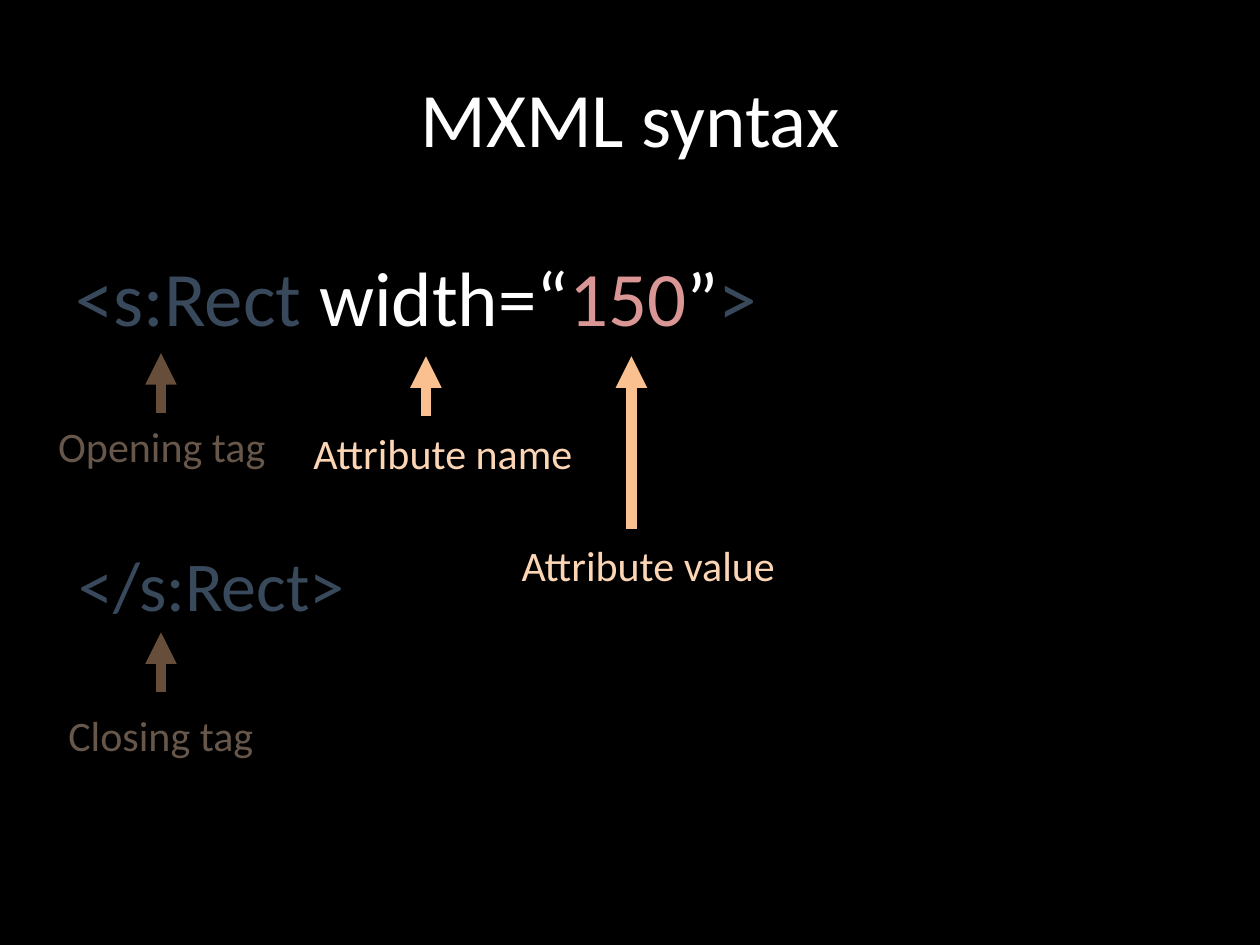
from dataclasses import dataclass

from lxml.etree import SubElement
from pptx import Presentation
from pptx.dml.color import RGBColor
from pptx.enum.shapes import MSO_CONNECTOR, MSO_SHAPE
from pptx.enum.text import MSO_ANCHOR, MSO_AUTO_SIZE, PP_ALIGN
from pptx.oxml.ns import qn
from pptx.util import Pt

BLACK, WHITE = "000000", "FFFFFF"
TAG_BLUE, VALUE_PINK = "8EB4E3", "D99694"
ARROW_ORANGE, LABEL_PEACH = "FAC090", "FCD5B5"


@dataclass(frozen=True)
class Box:
    left: float
    top: float
    width: float
    height: float

    def place(self) -> tuple:
        return Pt(self.left), Pt(self.top), Pt(self.width), Pt(self.height)


@dataclass(frozen=True)
class Arrow:
    x: float
    bottom: float
    top: float


@dataclass(frozen=True)
class Label:
    text: str
    box: Box
    size: float = 24
    color: str = LABEL_PEACH


def rgb(color: str) -> RGBColor:
    return RGBColor.from_string(color)


def add_text(paragraph, text: str, *, size: float, color: str, font: str = "Calibri") -> None:
    run = paragraph.add_run()
    run.text = text
    run.font.name = font
    run.font.size = Pt(size)
    run.font.color.rgb = rgb(color)


def add_line_of_text(slide, box: Box, align):
    frame = slide.shapes.add_textbox(*box.place()).text_frame
    frame.word_wrap = False
    frame.auto_size = MSO_AUTO_SIZE.SHAPE_TO_FIT_TEXT
    paragraph = frame.paragraphs[0]
    paragraph.alignment = align
    return paragraph


def draw_label(slide, label: Label) -> None:
    paragraph = add_line_of_text(slide, label.box, PP_ALIGN.CENTER)
    add_text(paragraph, label.text, size=label.size, color=label.color)


def draw_arrow(slide, arrow: Arrow) -> None:
    connector = slide.shapes.add_connector(
        MSO_CONNECTOR.STRAIGHT, Pt(arrow.x), Pt(arrow.bottom), Pt(arrow.x), Pt(arrow.top))
    connector.line.color.rgb = rgb(ARROW_ORANGE)
    connector.line.width = Pt(6)
    SubElement(connector.line._get_or_add_ln(), qn("a:tailEnd"), type="triangle")
    SubElement(connector._element.spPr, qn("a:effectLst"))


def draw_dimmer(slide, box: Box) -> None:
    dimmer = slide.shapes.add_shape(MSO_SHAPE.RECTANGLE, *box.place())
    dimmer.fill.solid()
    dimmer.fill.fore_color.rgb = rgb(BLACK)
    dimmer.line.fill.background()
    dimmer.shadow.inherit = False
    properties = dimmer._element.spPr
    fill_color = properties.find(qn("a:solidFill")).find(qn("a:srgbClr"))
    SubElement(fill_color, qn("a:alpha"), val="50000")
    shadow = SubElement(
        properties.find(qn("a:effectLst")), qn("a:outerShdw"),
        blurRad=str(Pt(3.1)), dist=str(Pt(1.8)), dir="5400000", rotWithShape="0")
    shadow_color = SubElement(shadow, qn("a:srgbClr"), val=BLACK)
    SubElement(shadow_color, qn("a:alpha"), val="35000")


OPENING_TAG = [
    ("<s:Rect ", TAG_BLUE),
    ("width=“", WHITE),
    ("150", VALUE_PINK),
    ("”", WHITE),
    (">", TAG_BLUE),
]
LABELS = [
    Label("Opening tag", Box(25.2, 236.9, 134.6, 36)),
    Label("Closing tag", Box(31, 401.8, 121.7, 36)),
    Label("</s:Rect>", Box(36, 306, 169.9, 55.4), 40, TAG_BLUE),
    Label("Attribute name", Box(170.6, 240.5, 164.9, 36)),
    Label("Attribute value", Box(289.4, 304.6, 162, 36)),
]
ARROWS = [
    Arrow(92, 236, 201.8),
    Arrow(92, 395.5, 361.4),
    Arrow(243.4, 237.8, 203.6),
    Arrow(360.8, 302.4, 203.6),
]
DIMMERS = [
    Box(20.2, 139, 154.8, 166.3),
    Box(38.9, 318.2, 166.3, 166.3),
    Box(410.4, 110.2, 154.8, 166.3),
]


def main() -> None:
    deck = Presentation()
    deck.slide_width, deck.slide_height = Pt(720), Pt(540)
    slide = deck.slides.add_slide(deck.slide_layouts[5])
    slide.background.fill.solid()
    slide.background.fill.fore_color.rgb = rgb(BLACK)

    title = slide.shapes.title
    title.left, title.top, title.width, title.height = Box(36, 21.6, 648, 90).place()
    title.text_frame.vertical_anchor = MSO_ANCHOR.MIDDLE
    heading = title.text_frame.paragraphs[0]
    heading.alignment = PP_ALIGN.CENTER
    add_text(heading, "MXML syntax", size=44, color=WHITE)

    code = add_line_of_text(slide, Box(36, 139, 408.2, 60.5), PP_ALIGN.LEFT)
    for part, color in OPENING_TAG:
        add_text(code, part, size=44, color=color)
    for label in LABELS:
        draw_label(slide, label)
    for arrow in ARROWS:
        draw_arrow(slide, arrow)
    for dimmer in DIMMERS:
        draw_dimmer(slide, dimmer)

    deck.save("out.pptx")


if __name__ == "__main__":
    main()
